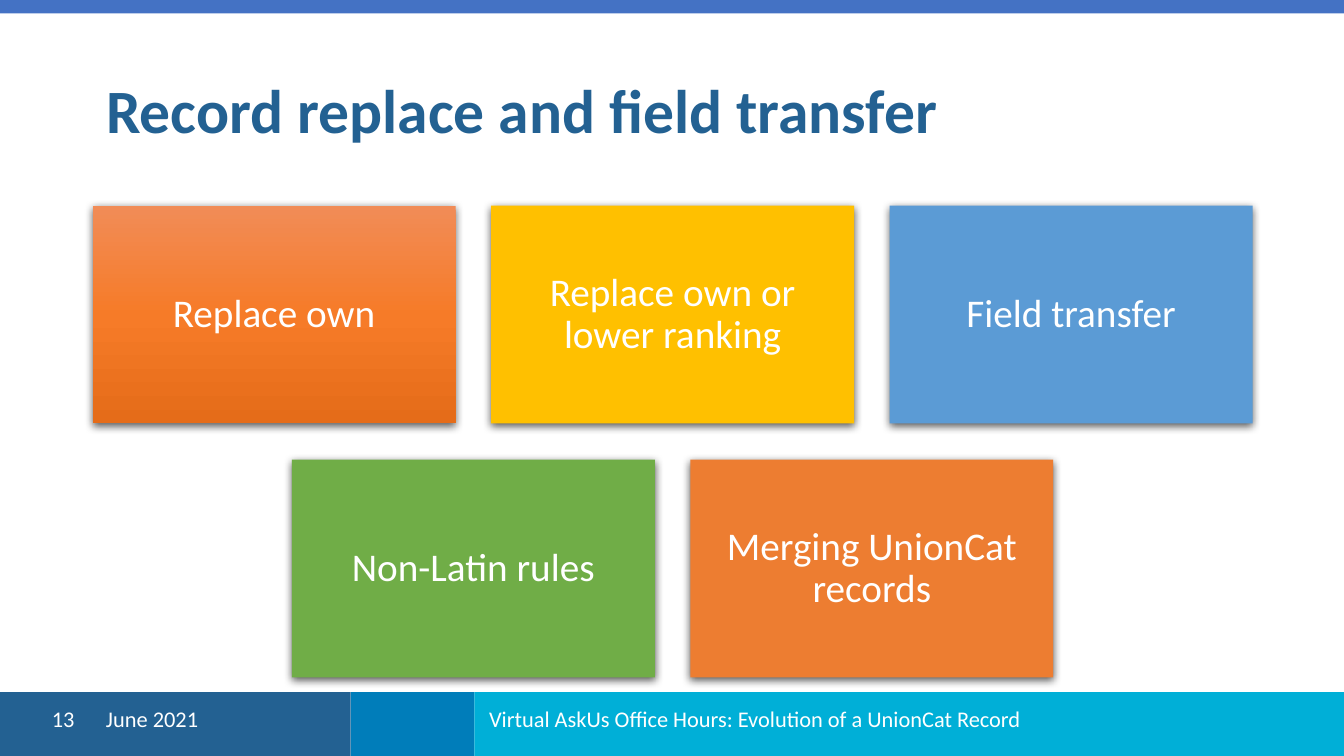
from copy import deepcopy
from dataclasses import dataclass

from lxml import etree
from pptx import Presentation
from pptx import util as u
from pptx.dml import color
from pptx.enum import shapes, text
from pptx.oxml import ns

WIDE = 10
HIGH = WIDE * 9 / 16
EDGE = 0.69                      # left and right margin
CARD_W, CARD_H = 2.7, 1.62
STEP_X, STEP_Y = 5.93 / 2, 1.89  # card grid pitch
GRID_TOP = 1.53
FOOT_TOP = 5.15
FOOT_H = HIGH - FOOT_TOP
NAVY, WHITE = "236192", "FFFFFF"
LEFT, MID = text.PP_ALIGN.LEFT, text.PP_ALIGN.CENTER


@dataclass
class Card:
    label: str
    col: float
    row: int
    fills: tuple[str, ...]


@dataclass
class Band:
    left: float
    top: float
    width: float
    height: float
    fills: tuple[str, ...]


@dataclass
class Note:
    label: str
    left: float
    width: float
    align: text.PP_ALIGN = LEFT


CARDS = [
    Card("Replace own", 0, 0, ("F18C57", "F67B28", "E56C19")),
    Card("Replace own or lower ranking", 1, 0, ("FFC000",)),
    Card("Field transfer", 2, 0, ("5B9BD5",)),
    Card("Non-Latin rules", 0.5, 1, ("70AD47",)),
    Card("Merging UnionCat records", 1.5, 1, ("ED7D31",)),
]
BANDS = [
    Band(0, FOOT_TOP, 2.61, FOOT_H, (NAVY,)),
    Band(2.61, FOOT_TOP, 0.92, FOOT_H, ("007DBA",)),
    Band(3.53, FOOT_TOP, WIDE - 3.53, FOOT_H, ("00AFD7",)),
    Band(0, 0, WIDE, 0.1, ("4472C4",)),
]
NOTES = [
    Note("June 2021", EDGE, 0.91),
    Note("Virtual AskUs Office Hours: Evolution of a UnionCat Record", 3.54, 4.32),
    Note("13", 0.25, 0.44, MID),
]


def tint(code: str) -> color.RGBColor:
    return color.RGBColor.from_string(code)


def write(frame, label: str, size: float, align: text.PP_ALIGN,
          code: str = WHITE, bold: bool = False) -> None:
    frame.word_wrap = True
    frame.auto_size = text.MSO_AUTO_SIZE.NONE
    frame.vertical_anchor = text.MSO_ANCHOR.MIDDLE
    para = frame.paragraphs[0]
    para.alignment, para.line_spacing = align, 0.9
    run = para.add_run()
    run.text = label
    font = run.font
    font.name, font.size, font.bold = "Calibri", u.Pt(size), bold
    font.color.rgb = tint(code)


def paint(shape, fills: tuple[str, ...]) -> None:
    """One colour fills solid; several run from top to bottom."""
    if len(fills) == 1:
        shape.fill.solid()
        shape.fill.fore_color.rgb = tint(fills[0])
        return
    shape.fill.gradient()
    shape.fill.gradient_angle = 270
    stops = shape._element.spPr.find(".//" + ns.qn("a:gsLst"))
    while len(stops) < len(fills):
        stops.append(deepcopy(stops[0]))
    for i, (stop, code) in enumerate(zip(shape.fill.gradient_stops, fills)):
        stop.color.rgb = tint(code)
        stop.position = i / (len(fills) - 1)


def add_band(slide, band: Band):
    shape = slide.shapes.add_shape(
        shapes.MSO_SHAPE.RECTANGLE,
        *map(u.Inches, (band.left, band.top, band.width, band.height)))
    shape.shadow.inherit = False
    shape.line.fill.background()
    paint(shape, band.fills)
    return shape


def add_shadow(shape) -> None:
    list_ = shape._element.spPr.find(ns.qn("a:effectLst"))
    outer = etree.SubElement(list_, ns.qn("a:outerShdw"),
                             blurRad=str(u.Pt(4.5)), dist=str(u.Pt(1.5)),
                             dir="5400000", rotWithShape="0")
    shade = etree.SubElement(outer, ns.qn("a:srgbClr"), val="000000")
    etree.SubElement(shade, ns.qn("a:alpha"), val="63000")


def add_card(slide, card: Card) -> None:
    shape = add_band(slide, Band(EDGE + card.col * STEP_X,
                                 GRID_TOP + card.row * STEP_Y,
                                 CARD_W, CARD_H, card.fills))
    add_shadow(shape)
    frame = shape.text_frame
    frame.margin_left = frame.margin_right = u.Inches(0.09)
    frame.margin_top = frame.margin_bottom = u.Inches(0.09)
    write(frame, card.label, 21, MID)


def add_note(slide, note: Note) -> None:
    box = slide.shapes.add_textbox(
        *map(u.Inches, (note.left, 5.21, note.width, 0.3)))
    write(box.text_frame, note.label, 12, note.align)


def main() -> None:
    deck = Presentation()
    deck.slide_width, deck.slide_height = u.Inches(WIDE), u.Inches(HIGH)
    slide = deck.slides.add_slide(deck.slide_layouts[5])

    # Top bar and footer bands
    for band in BANDS:
        add_band(slide, band)

    # Title
    title = slide.shapes.title
    title.left, title.top = u.Inches(EDGE), u.Inches(0.3)
    title.width, title.height = u.Inches(WIDE - 2 * EDGE), u.Inches(1.09)
    write(title.text_frame, "Record replace and field transfer", 33, LEFT,
          NAVY, True)

    # Cards and footer text
    for card in CARDS:
        add_card(slide, card)
    for note in NOTES:
        add_note(slide, note)

    deck.save("out.pptx")


if __name__ == "__main__":
    main()
